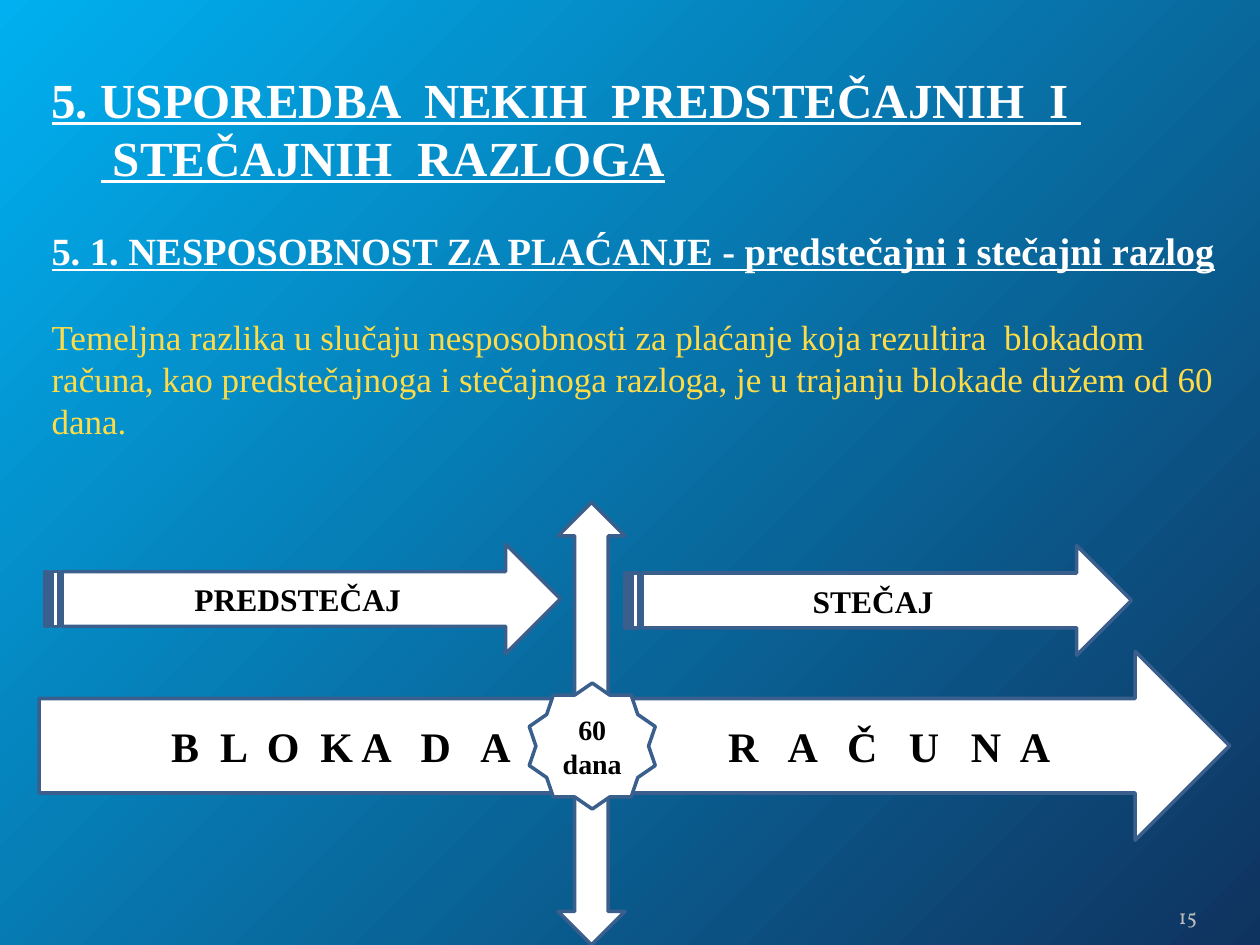
from lxml import etree
from pptx import Presentation
from pptx.dml.color import RGBColor
from pptx.enum.shapes import MSO_SHAPE
from pptx.enum.text import MSO_ANCHOR, PP_ALIGN
from pptx.oxml.ns import qn
from pptx.util import Cm, Pt

RIGHT_ARROW = MSO_SHAPE.RIGHT_ARROW
STRIPED_ARROW = MSO_SHAPE.STRIPED_RIGHT_ARROW
UP_DOWN_ARROW = MSO_SHAPE.UP_DOWN_ARROW
STAR = MSO_SHAPE.STAR_10_POINT
LEFT, CENTER, RIGHT = PP_ALIGN.LEFT, PP_ALIGN.CENTER, PP_ALIGN.RIGHT
MIDDLE, BOTTOM = MSO_ANCHOR.MIDDLE, MSO_ANCHOR.BOTTOM

WHITE = RGBColor(0xFF, 0xFF, 0xFF)
BLACK = RGBColor(0x00, 0x00, 0x00)
YELLOW = RGBColor(0xFF, 0xDC, 0x47)
GREY = RGBColor(0xBD, 0xBD, 0xBD)
OUTLINE = RGBColor(0x3A, 0x5F, 0x8C)
SKY = RGBColor(0x00, 0xB0, 0xF0)
NAVY = RGBColor(0x0F, 0x33, 0x5F)
SERIF = "Times New Roman"


def write(p, text, size=18, font=SERIF, color=BLACK, bold=False,
          underline=False, align=LEFT, line=None, before=0):
    p.alignment = align
    p.space_before = Pt(before)
    if line:
        p.line_spacing = Pt(line)
    r = p.add_run()
    r.text = text
    r.font.size = Pt(size)
    r.font.name = font
    r.font.color.rgb = color
    r.font.bold = bold
    r.font.underline = underline


def add_block(s, kind, x, y, w, h, lines=(), **fmt):
    sp = s.shapes.add_shape(kind, Cm(x), Cm(y), Cm(w), Cm(h))
    sp.shadow.inherit = False
    sp.fill.solid()
    sp.fill.fore_color.rgb = WHITE
    sp.line.color.rgb = OUTLINE
    sp.line.width = Pt(2)
    tf = sp.text_frame
    tf.word_wrap = True
    tf.vertical_anchor = MIDDLE
    tf.margin_left = tf.margin_right = 0
    for i, text in enumerate(lines):
        p = tf.add_paragraph() if i else tf.paragraphs[0]
        write(p, text, bold=True, **{"align": CENTER, **fmt})
    return sp


def add_background(s):
    fill = s.background.fill
    fill.gradient()
    for stop, color, position in zip(fill.gradient_stops, (SKY, NAVY), (0, 1)):
        stop.color.rgb = color
        stop.position = position
    lin = next(s.element.iter(qn("a:lin")))
    grad = lin.getparent()
    grad.remove(lin)
    shade = etree.SubElement(grad, qn("a:path"), {"path": "circle"})
    etree.SubElement(shade, qn("a:fillToRect"), {"r": "100000", "b": "100000"})


def add_explanation(s, x, y, w, h):
    tf = s.shapes.add_textbox(Cm(x), Cm(y), Cm(w), Cm(h)).text_frame
    tf.word_wrap = True
    tf.margin_top = Cm(0.18)
    heading = dict(color=WHITE, bold=True, underline=True)
    title = dict(heading, size=28, line=33)
    write(tf.paragraphs[0], "5. USPOREDBA  NEKIH  PREDSTEČAJNIH  I ", **title)
    p = tf.add_paragraph()
    p._p.get_or_add_pPr().set("marL", str(Cm(0.99)))
    write(p, " STEČAJNIH  RAZLOGA", **title)
    write(tf.add_paragraph(),
          "5. 1. NESPOSOBNOST ZA PLAĆANJE - predstečajni i stečajni razlog",
          size=22, line=26, before=24, **heading)
    write(tf.add_paragraph(),
          "Temeljna razlika u slučaju nesposobnosti za plaćanje koja rezultira  "
          "blokadom računa, kao predstečajnoga i stečajnoga razloga, je u "
          "trajanju blokade dužem od 60 dana.",
          size=20, color=YELLOW, line=24, before=24)


def add_timeline(s, x, y, w, h):
    sp = add_block(s, RIGHT_ARROW, x, y + 3, w, 3.81,
                   ["B  L  O  K A   D   A\tR   A   Č   U   N  A"],
                   size=24, align=LEFT)
    sp.text_frame.margin_left = Cm(2.66)
    pPr = sp.text_frame.paragraphs[0]._p.get_or_add_pPr()
    tabs = etree.SubElement(pPr, qn("a:tabLst"))
    etree.SubElement(tabs, qn("a:tab"), {"pos": str(Cm(11.23)), "algn": "l"})
    add_block(s, UP_DOWN_ARROW, x + 10.46, y, 1.35, h)
    add_block(s, STAR, x + 9.88, y + 3.64, 2.54, 2.54, ["60", "dana"], size=16)
    add_block(s, STRIPED_ARROW, x + 0.12, y + 0.84, 10.39, 2.21, ["PREDSTEČAJ"])
    add_block(s, STRIPED_ARROW, x + 11.81, y + 0.87, 10.21, 2.21, ["STEČAJ"])


def add_page_number(s, x, y, w, h):
    tf = s.shapes.add_textbox(Cm(x), Cm(y), Cm(w), Cm(h)).text_frame
    tf.word_wrap = True
    tf.vertical_anchor = BOTTOM
    tf.margin_left = tf.margin_right = 0
    write(tf.paragraphs[0], "15", size=12, font="Vollkorn", color=GREY, align=RIGHT)


def main():
    prs = Presentation()
    prs.slide_width, prs.slide_height = Cm(25.4), Cm(19.05)
    s = prs.slides.add_slide(prs.slide_layouts[6])
    add_background(s)
    add_page_number(s, 22.02, 17.83, 2.11, 1.02)
    add_timeline(s, 0.79, 10.13, 24, 8.92)
    add_explanation(s, 0.79, 1.24, 24, 8.64)
    prs.save("out.pptx")


if __name__ == "__main__":
    main()
